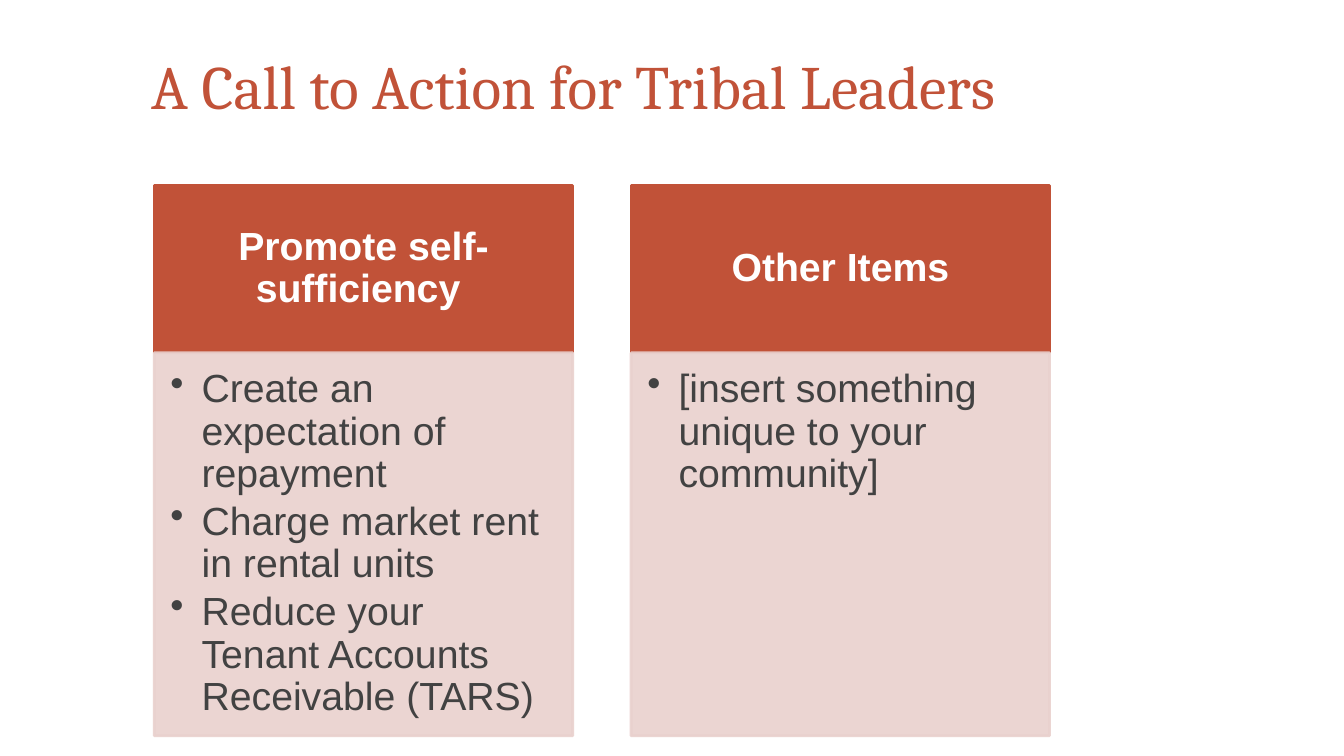
from dataclasses import dataclass

from lxml.etree import SubElement
from pptx import Presentation
from pptx.dml.color import RGBColor
from pptx.enum.shapes import MSO_SHAPE
from pptx.enum.text import MSO_ANCHOR, MSO_AUTO_SIZE, PP_ALIGN
from pptx.oxml.ns import qn
from pptx.util import Inches, Pt


@dataclass(frozen=True)
class Theme:
    """Colours, fonts, type sizes and the column grid of the slide."""

    accent: str = "C15238"
    tint: str = "E9D1CE"
    white: str = "FFFFFF"
    ink: str = "424242"
    title_font: str = "Cambria"
    body_font: str = "Arial"
    title_size: int = 44
    body_size: int = 28
    line_width: int = 2
    tint_opacity: int = 90
    left: float = 1.53
    column_width: float = 4.15
    gutter: float = 0.58
    header_top: float = 1.84
    header_height: float = 1.66
    body_height: float = 3.8


def write_text(frame, lines, *, font, size, color, bold=False, align=PP_ALIGN.LEFT,
               anchor=MSO_ANCHOR.TOP, margins=(0.1, 0.05, 0.1, 0.05), bullet=None,
               indent=0.31, space_after=0):
    """Write each line as a paragraph of the frame in the given format."""
    frame.word_wrap = True
    frame.auto_size = MSO_AUTO_SIZE.NONE
    frame.vertical_anchor = anchor
    (frame.margin_left, frame.margin_top,
     frame.margin_right, frame.margin_bottom) = map(Inches, margins)
    for index, line in enumerate(lines):
        para = frame.add_paragraph() if index else frame.paragraphs[0]
        para.alignment = align
        para.line_spacing = 0.9
        para.space_after = Pt(space_after)
        if bullet:
            properties = para._p.get_or_add_pPr()
            properties.set("marL", str(Inches(indent)))
            properties.set("indent", str(-Inches(indent)))
            SubElement(properties, qn("a:buChar")).set("char", bullet)
        span = para.add_run()
        span.text = line
        span.font.name = font
        span.font.size = Pt(size)
        span.font.bold = bold
        span.font.color.rgb = RGBColor.from_string(color)


class SlideBuilder:
    """Builds a titled page of columns in one theme."""

    def __init__(self, deck, theme):
        """Open a title-only page in the deck."""
        self.theme = theme
        self.page = deck.slides.add_slide(deck.slide_layouts[5])

    def title(self, text):
        """Place and format the page title."""
        box = self.page.shapes.title
        box.left, box.top, box.width, box.height = map(Inches, (1.4, 0.16, 10.16, 1.45))
        write_text(box.text_frame, [text], font=self.theme.title_font,
                   size=self.theme.title_size, color=self.theme.accent,
                   anchor=MSO_ANCHOR.MIDDLE)

    def panel(self, column, top, height, color, opacity=100):
        """Add a filled rectangle in a grid column and return it."""
        theme = self.theme
        left = theme.left + column * (theme.column_width + theme.gutter)
        box = self.page.shapes.add_shape(
            MSO_SHAPE.RECTANGLE, *map(Inches, (left, top, theme.column_width, height)))
        box.shadow.inherit = False
        box.fill.solid()
        box.fill.fore_color.rgb = RGBColor.from_string(color)
        box.line.color.rgb = RGBColor.from_string(color)
        box.line.width = Pt(theme.line_width)
        if opacity < 100:
            for shade in box._element.spPr.iter(qn("a:srgbClr")):
                SubElement(shade, qn("a:alpha")).set("val", str(opacity * 1000))
        return box

    def column(self, index, heading, items):
        """Add a heading panel with a bulleted panel under it."""
        theme = self.theme
        header = self.panel(index, theme.header_top, theme.header_height, theme.accent)
        write_text(header.text_frame, [heading], font=theme.body_font,
                   size=theme.body_size, color=theme.white, bold=True,
                   align=PP_ALIGN.CENTER, anchor=MSO_ANCHOR.MIDDLE,
                   margins=(0.22, 0.12, 0.22, 0.12))
        body = self.panel(index, theme.header_top + theme.header_height,
                          theme.body_height, theme.tint, theme.tint_opacity)
        write_text(body.text_frame, items, font=theme.body_font, size=theme.body_size,
                   color=theme.ink, margins=(0.16, 0.16, 0.22, 0.24), bullet="•",
                   space_after=4)


def main():
    """Build and save the deck."""
    deck = Presentation()
    deck.slide_width, deck.slide_height = Inches(13.33), Inches(7.5)
    builder = SlideBuilder(deck, Theme())
    builder.title("A Call to Action for Tribal Leaders")
    columns = [
        ("Promote self-sufficiency ", [
            "Create an expectation of repayment",
            "Charge market rent in rental units",
            "Reduce your Tenant Accounts Receivable (TARS)",
        ]),
        ("Other Items", ["[insert something unique to your community]"]),
    ]
    for index, (heading, items) in enumerate(columns):
        builder.column(index, heading, items)
    deck.save("out.pptx")


if __name__ == "__main__":
    main()
